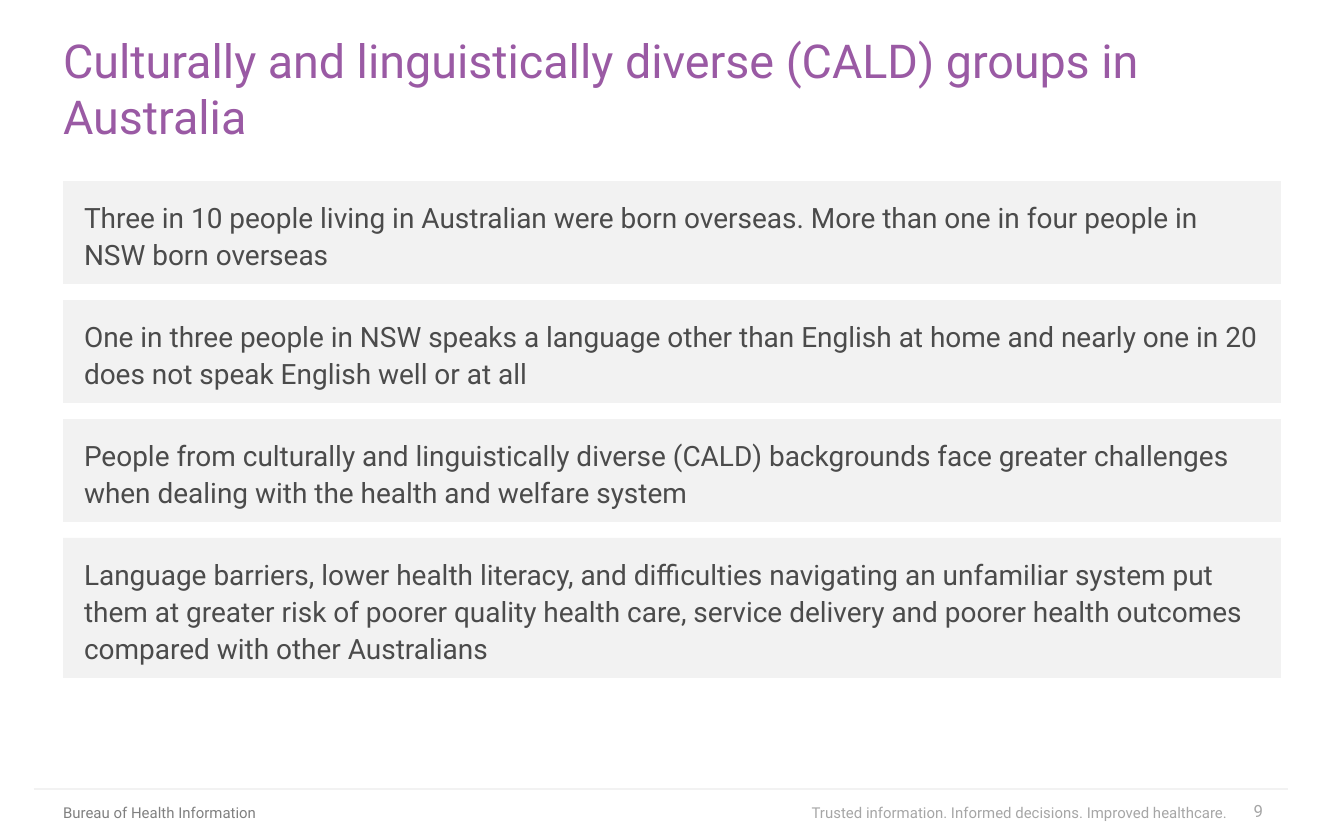
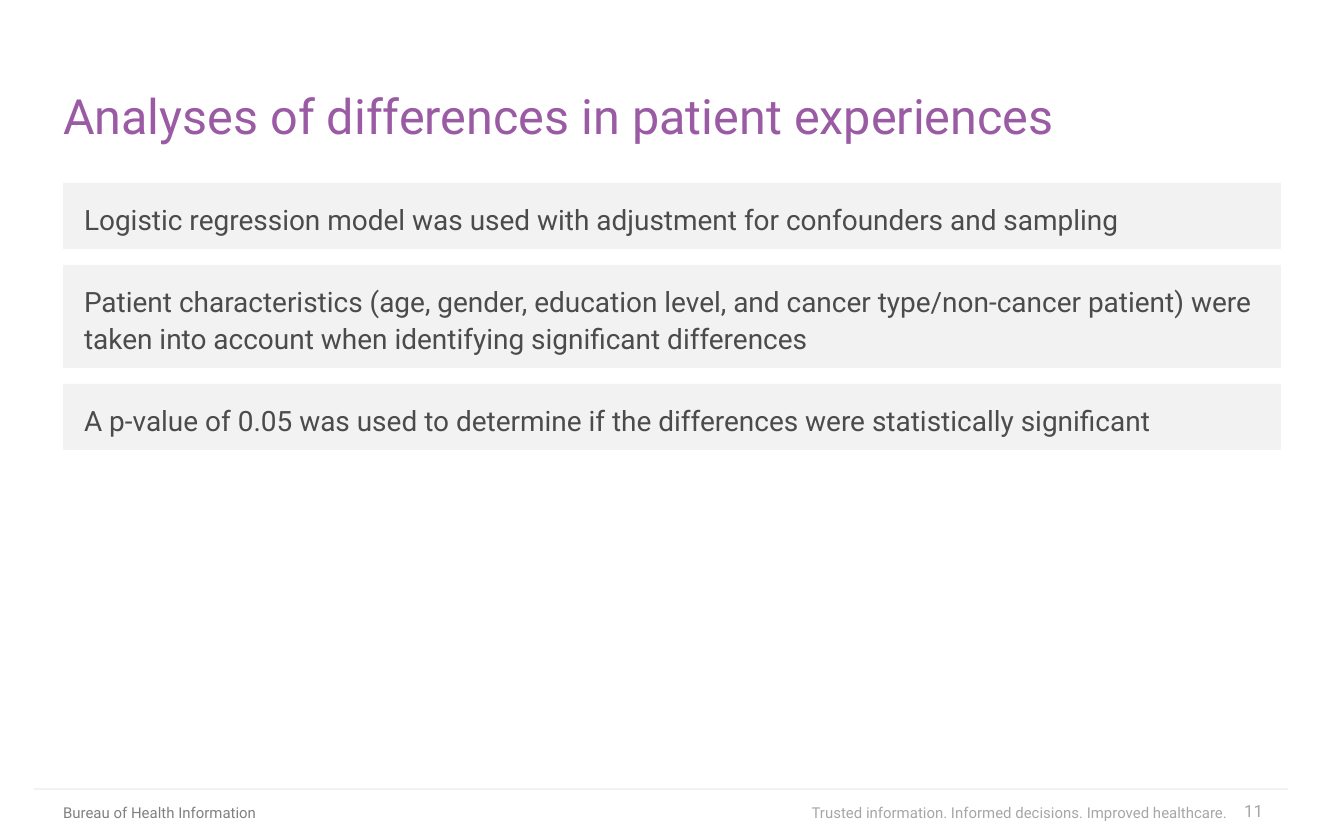
from lxml import etree
from pptx import Presentation
from pptx import util as u
from pptx.dml.color import RGBColor
from pptx.enum import shapes, text
from pptx.oxml.ns import qn

PX = 914400 / 134.4
FONT = "Roboto"
PURPLE = RGBColor(0x9A, 0x5A, 0xA4)
INK = RGBColor(0x4B, 0x4B, 0x4B)
GREY = RGBColor(0x80, 0x80, 0x80)
PALE_GREY = RGBColor(0xA6, 0xA6, 0xA6)
PANEL = RGBColor(0xF2, 0xF2, 0xF2)
WHITE = RGBColor(0xFF, 0xFF, 0xFF)

LEFT, WIDTH = 63, 1218
LINE_HEIGHT, PANEL_PADDING, GAP = 37, 29, 16

SLIDES = [
    {
        "number": "9",
        "title": "Culturally and linguistically diverse (CALD) groups in Australia",
        "title_size": 25,
        "top": 181,
        "panels": [
            (2, "Three in 10 people living in Australian were born overseas. "
                "More than one in four people in NSW born overseas"),
            (2, "One in three people in NSW speaks a language other than English at home "
                "and nearly one in 20 does not speak English well or at all"),
            (2, "People from culturally and linguistically diverse (CALD) backgrounds face "
                "greater challenges when dealing with the health and welfare system"),
            (3, "Language barriers, lower health literacy, and difficulties navigating an "
                "unfamiliar system put them at greater risk of poorer quality health care, "
                "service delivery and poorer health outcomes compared with other Australians"),
        ],
    },
    {
        "number": "11",
        "title": "Analyses of differences in patient experiences",
        "title_size": 26,
        "top": 183,
        "panels": [
            (1, "Logistic regression model was used with adjustment for confounders and sampling"),
            (2, "Patient characteristics (age, gender, education level, and cancer "
                "type/non-cancer patient) were taken into account when identifying "
                "significant differences"),
            (1, "A p-value of 0.05 was used to determine if the differences were "
                "statistically significant"),
        ],
    },
]


def px(*lengths):
    return [u.Emu(round(length * PX)) for length in lengths]


def write(box, words, size, color, anchor, align=text.PP_ALIGN.LEFT, inset=(0, 0), wrap=True):
    frame = box.text_frame
    frame.text = words
    frame.word_wrap = wrap
    frame.vertical_anchor = anchor
    frame.margin_left, frame.margin_top = px(*inset)
    frame.margin_right, frame.margin_bottom = px(*inset)
    para = frame.paragraphs[0]
    para.alignment = align
    for span in para.runs:
        span.font.name = FONT
        span.font.size = u.Pt(size)
        span.font.color.rgb = color
    return para


deck = Presentation()
deck.slide_width, deck.slide_height = px(1344, 840)
ANCHOR, ALIGN = text.MSO_ANCHOR, text.PP_ALIGN

for content in SLIDES:
    page = deck.slides.add_slide(deck.slide_layouts[6])
    page.background.fill.solid()
    page.background.fill.fore_color.rgb = WHITE

    bureau = page.shapes.add_textbox(*px(LEFT, 802, 208, 22))
    write(bureau, "Bureau of Health Information", 8, GREY, ANCHOR.MIDDLE, wrap=False)
    motto = page.shapes.add_textbox(*px(786, 802, 442, 22))
    write(motto, "Trusted information. Informed decisions. Improved healthcare.",
          8, PALE_GREY, ANCHOR.MIDDLE, ALIGN.RIGHT)
    number = page.shapes.add_textbox(*px(1228, 800, 35, 22))
    write(number, content["number"], 9, PALE_GREY, ANCHOR.MIDDLE, ALIGN.RIGHT)

    rule = page.shapes.add_connector(shapes.MSO_CONNECTOR.STRAIGHT, *px(34, 789, 1288, 789))
    rule.line.color.rgb = PANEL
    rule.line.width = u.Pt(0.75)
    etree.SubElement(rule._element.spPr, qn("a:effectLst"))

    title = page.shapes.add_textbox(*px(LEFT, 39, WIDTH, 105))
    write(title, content["title"], content["title_size"], PURPLE, ANCHOR.BOTTOM)

    top = content["top"]
    for lines, words in content["panels"]:
        height = PANEL_PADDING + lines * LINE_HEIGHT
        panel = page.shapes.add_shape(shapes.MSO_SHAPE.RECTANGLE, *px(LEFT, top, WIDTH, height))
        panel.shadow.inherit = False
        panel.fill.solid()
        panel.fill.fore_color.rgb = PANEL
        panel.line.fill.background()
        para = write(panel, words, 15, INK, ANCHOR.TOP, inset=(21, 16))
        para.line_spacing = 1.1
        para.space_after = u.Pt(3)
        panel.text_frame.auto_size = text.MSO_AUTO_SIZE.SHAPE_TO_FIT_TEXT
        top += height + GAP

deck.save("out.pptx")
